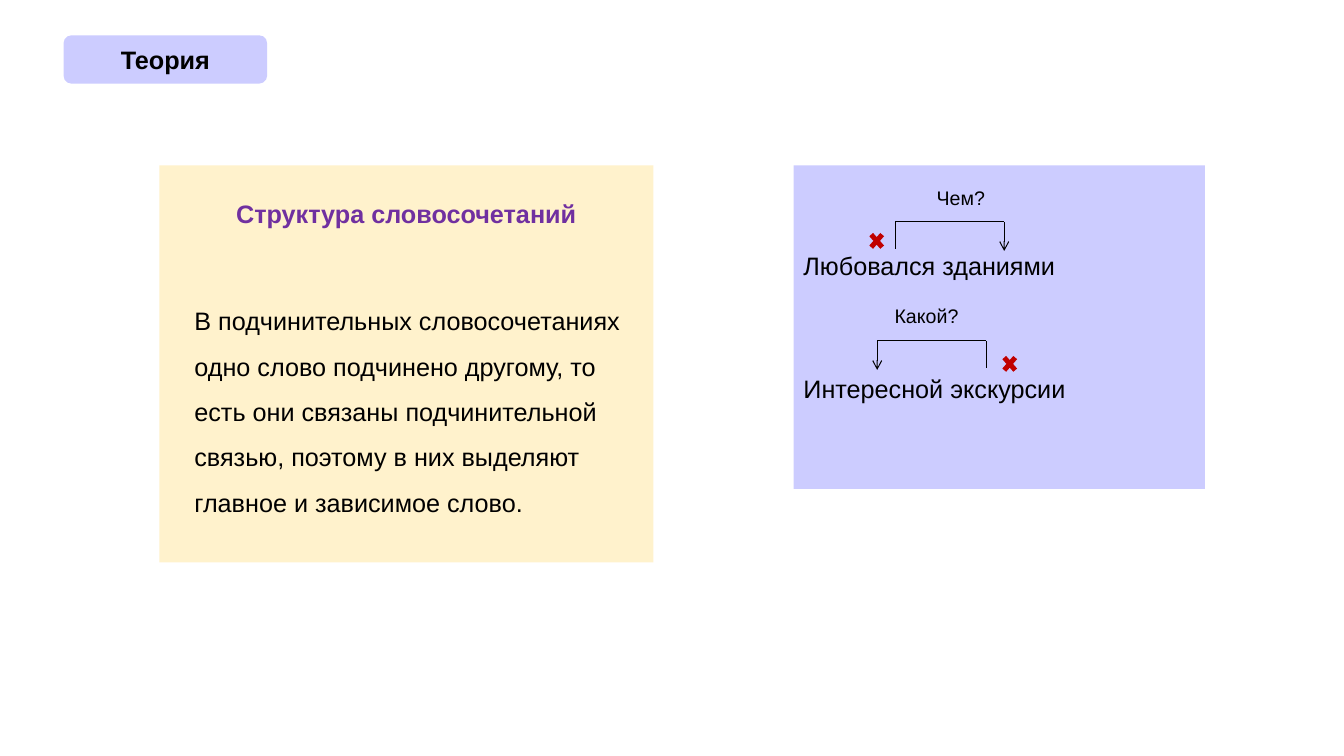
from dataclasses import dataclass

from lxml import etree
from pptx import Presentation, util as u
from pptx.dml.color import RGBColor
from pptx.enum import shapes, text
from pptx.oxml import ns

PX = 9144  # 100 px to the inch


@dataclass(frozen=True)
class Theme:
    font: str = "Arial"
    lilac: str = "CCCCFF"
    cream: str = "FFF2CC"
    purple: str = "7030A0"
    red: str = "C00000"
    black: str = "000000"
    body: int = 18
    small: int = 14
    line: float = 0.75


THEME = Theme()
LEFT, CENTER = text.PP_ALIGN.LEFT, text.PP_ALIGN.CENTER


def px(*lengths):
    return [u.Emu(length * PX) for length in lengths]


def add_block(slide, box, fill, kind=shapes.MSO_SHAPE.RECTANGLE):
    shape = slide.shapes.add_shape(kind, *px(*box))
    shape.shadow.inherit = False
    shape.fill.solid()
    shape.fill.fore_color.rgb = RGBColor.from_string(fill)
    shape.line.fill.background()
    frame = shape.text_frame
    frame.word_wrap = True
    frame.vertical_anchor = text.MSO_ANCHOR.MIDDLE
    return shape


def add_text(shape, words, size=THEME.body, color=THEME.black, bold=False,
             align=LEFT, before=0, spacing=1.0):
    frame = shape.text_frame
    paragraph = frame.paragraphs[0]
    if paragraph.runs:
        paragraph = frame.add_paragraph()
    paragraph.alignment = align
    paragraph.line_spacing = spacing
    paragraph.space_before = u.Pt(before)
    run = paragraph.add_run()
    run.text = words
    run.font.name = THEME.font
    run.font.size = u.Pt(size)
    run.font.bold = bold
    run.font.color.rgb = RGBColor.from_string(color)
    return paragraph


def add_line(slide, start, end, arrow=False):
    line = slide.shapes.add_connector(
        shapes.MSO_CONNECTOR.STRAIGHT, *px(*start, *end))
    line.line.color.rgb = RGBColor.from_string(THEME.black)
    line.line.width = u.Pt(THEME.line)
    if arrow:
        etree.SubElement(line.line._get_or_add_ln(), ns.qn("a:tailEnd"), type="arrow")
    etree.SubElement(line._element.spPr, ns.qn("a:effectLst"))


def title_tag(slide, box):
    tag = add_block(slide, box, THEME.lilac, shapes.MSO_SHAPE.ROUNDED_RECTANGLE)
    add_text(tag, "Теория", bold=True, align=CENTER)


def theory_panel(slide, box):
    panel = add_block(slide, box, THEME.cream)
    frame = panel.text_frame
    frame.vertical_anchor = text.MSO_ANCHOR.TOP
    frame.margin_top = px(18)[0]
    add_text(panel, "Структура словосочетаний", color=THEME.purple, bold=True,
             align=CENTER, spacing=1.5)
    body = add_text(
        panel,
        "В подчинительных словосочетаниях одно слово подчинено другому, то есть "
        "они связаны подчинительной связью, поэтому в них выделяют главное и "
        "зависимое слово.", before=44, spacing=1.5)
    properties = body._p.get_or_add_pPr()
    properties.set("marL", str(25 * PX))
    properties.set("indent", "0")


def bracket(slide, left, top, arrow_right):
    """Link the main word to the dependent one, which the arrow points at."""
    right = left + 108
    main, dependent = (left, right) if arrow_right else (right, left)
    add_line(slide, (main, top + 27), (main, top))
    add_line(slide, (left, top), (right, top))
    add_line(slide, (dependent, top), (dependent, top + 29), arrow=True)


def example_panel(slide, box):
    left, top = box[:2]
    panel = add_block(slide, box, THEME.lilac)
    add_text(panel, "Любовался зданиями")
    add_text(panel, "Интересной экскурсии", before=66)

    # Question, its offset, bracket offset, cross offset, arrow to the right
    links = [
        ("Чем?", (75, 17), (101, 56), (72, 63), True),
        ("Какой?", (41, 134), (83, 174), (204, 185), False),
    ]
    for question, label, link, cross, arrow_right in links:
        add_block(slide, (left + cross[0], top + cross[1], 21, 24), THEME.red,
                  shapes.MSO_SHAPE.MATH_MULTIPLY)
        block = add_block(slide, (left + label[0], top + label[1], 182, 31), THEME.lilac)
        add_text(block, question, size=THEME.small, align=CENTER)
        bracket(slide, left + link[0], top + link[1], arrow_right)


def main():
    presentation = Presentation()
    presentation.slide_width, presentation.slide_height = px(1333, 750)
    slide = presentation.slides.add_slide(presentation.slide_layouts[6])
    title_tag(slide, (63, 35, 202, 48))
    theory_panel(slide, (158, 164, 490, 394))
    example_panel(slide, (787, 164, 408, 321))
    presentation.save("out.pptx")


if __name__ == "__main__":
    main()
